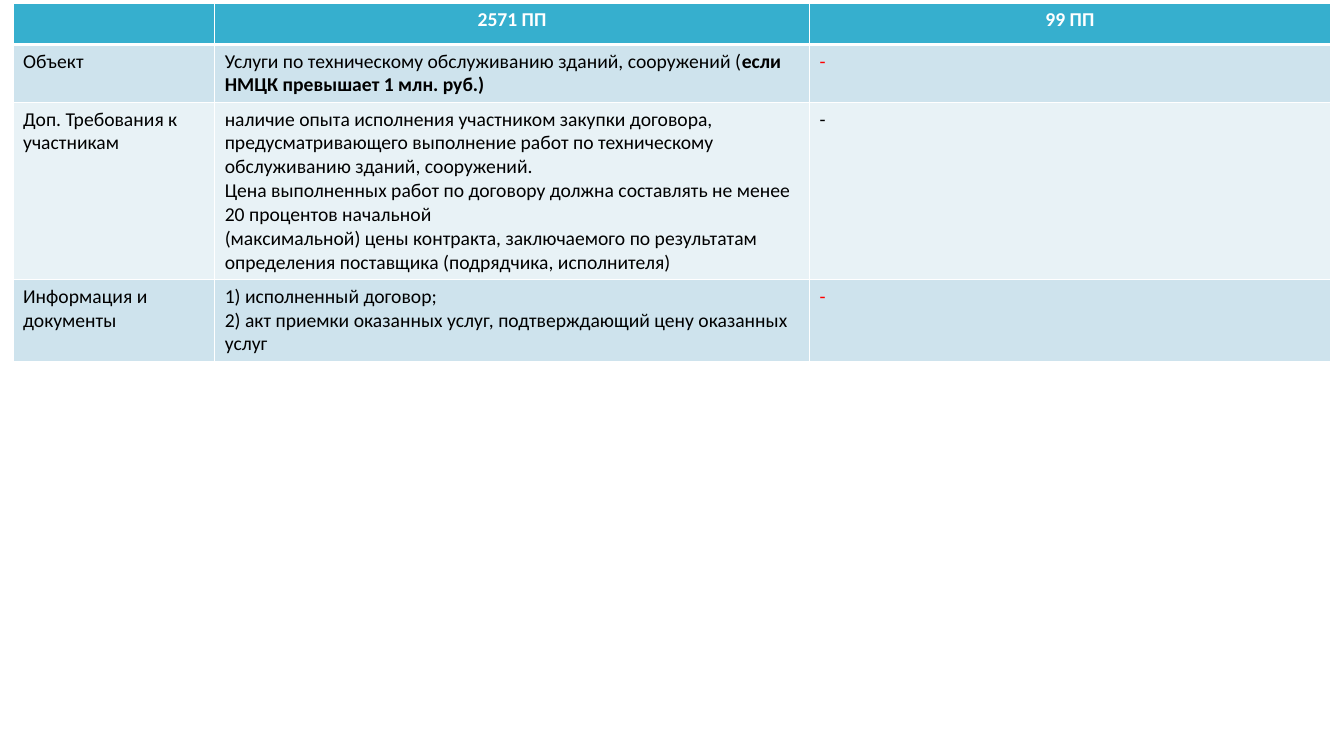
"""Build a slide with a table that compares the rules of two decrees."""
from dataclasses import dataclass

from lxml.etree import SubElement
from pptx import Presentation
from pptx.dml.color import RGBColor
from pptx.enum.text import PP_ALIGN as Align
from pptx.oxml.ns import qn
from pptx.table import _Cell as Cell
from pptx.util import Cm, Pt

WHITE, BLACK, RED = "FFFFFF", "000000", "FF0000"
HEAD, DARK, LIGHT = "36AFCE", "CEE3ED", "E8F2F6"
WIDTHS = (5.08, 14.99, 13.13)


@dataclass
class Run:
    text: str
    bold: bool = False
    color: str = BLACK


@dataclass
class Row:
    height: float
    fill: str
    cells: list[list[list[Run]]]
    align: Align = Align.LEFT
    top: float = 1
    base: float = 1


ROWS = [
    Row(1.04, HEAD, [[], [[Run("2571 ПП", True, WHITE)]], [[Run("99 ПП", True, WHITE)]]],
        align=Align.CENTER, base=3),
    Row(1.46, DARK, [
        [[Run("Объект")]],
        [[Run("Услуги по техническому обслуживанию зданий, сооружений ("),
          Run("если НМЦК превышает 1 млн. руб.)", True)]],
        [[Run("-", color=RED)]],
    ], top=3),
    Row(4.46, LIGHT, [
        [[Run("Доп. Требования к участникам")]],
        [[Run("наличие опыта исполнения участником закупки договора, предусматривающего "
              "выполнение работ по техническому обслуживанию зданий, сооружений.")],
         [Run("Цена выполненных работ по договору должна составлять не менее "
              "20 процентов начальной")],
         [Run("(максимальной) цены контракта, заключаемого по результатам определения "
              "поставщика (подрядчика, исполнителя)")]],
        [[Run("-")]],
    ]),
    Row(2.04, DARK, [
        [[Run("Информация и документы")]],
        [[Run("1) исполненный договор;")],
         [Run("2) акт приемки оказанных услуг, подтверждающий цену оказанных услуг")]],
        [[Run("-", color=RED)]],
    ]),
]


def paint(target, color: str) -> None:
    """Give a fill or a font colour its hex value."""
    target.rgb = RGBColor.from_string(color)


def write(para, text: str, *, bold: bool = False, color: str = BLACK,
          size: float = 14, face: str = "Calibri") -> None:
    """Add a formatted run to a paragraph."""
    run = para.add_run()
    run.text = text
    run.font.name, run.font.size, run.font.bold = face, Pt(size), bold
    paint(run.font.color, color)


def edge(cell: Cell, top: float, base: float) -> None:
    """Draw the white borders of a cell."""
    props = cell._tc.get_or_add_tcPr()
    sides = {"a:lnL": 1, "a:lnR": 1, "a:lnT": top, "a:lnB": base}
    for place, (tag, width) in enumerate(sides.items()):
        line = SubElement(props, qn(tag), w=str(Pt(width)))
        SubElement(SubElement(line, qn("a:solidFill")), qn("a:srgbClr"), val=WHITE)
        props.insert(place, line)


def fill(cell: Cell, paras: list[list[Run]], row: Row) -> None:
    """Set the fill, borders and text of a cell."""
    cell.fill.solid()
    paint(cell.fill.fore_color, row.fill)
    edge(cell, row.top, row.base)
    frame = cell.text_frame
    for place, runs in enumerate(paras):
        para = frame.add_paragraph() if place else frame.paragraphs[0]
        para.alignment = row.align
        for run in runs:
            write(para, run.text, bold=run.bold, color=run.color)


def main() -> None:
    """Make the deck and save it."""
    deck = Presentation()
    deck.slide_width, deck.slide_height = Cm(33.87), Cm(19.05)
    slide = deck.slides.add_slide(deck.slide_layouts[6])
    high = sum(row.height for row in ROWS)
    table = slide.shapes.add_table(len(ROWS), len(WIDTHS), Cm(0.33), Cm(0.08),
                                   Cm(sum(WIDTHS)), Cm(high)).table
    for col, width in zip(table.columns, WIDTHS):
        col.width = Cm(width)
    for line, row in zip(table.rows, ROWS):
        line.height = Cm(row.height)
        for cell, paras in zip(line.cells, row.cells):
            fill(cell, paras, row)
    deck.save("out.pptx")


if __name__ == "__main__":
    main()
